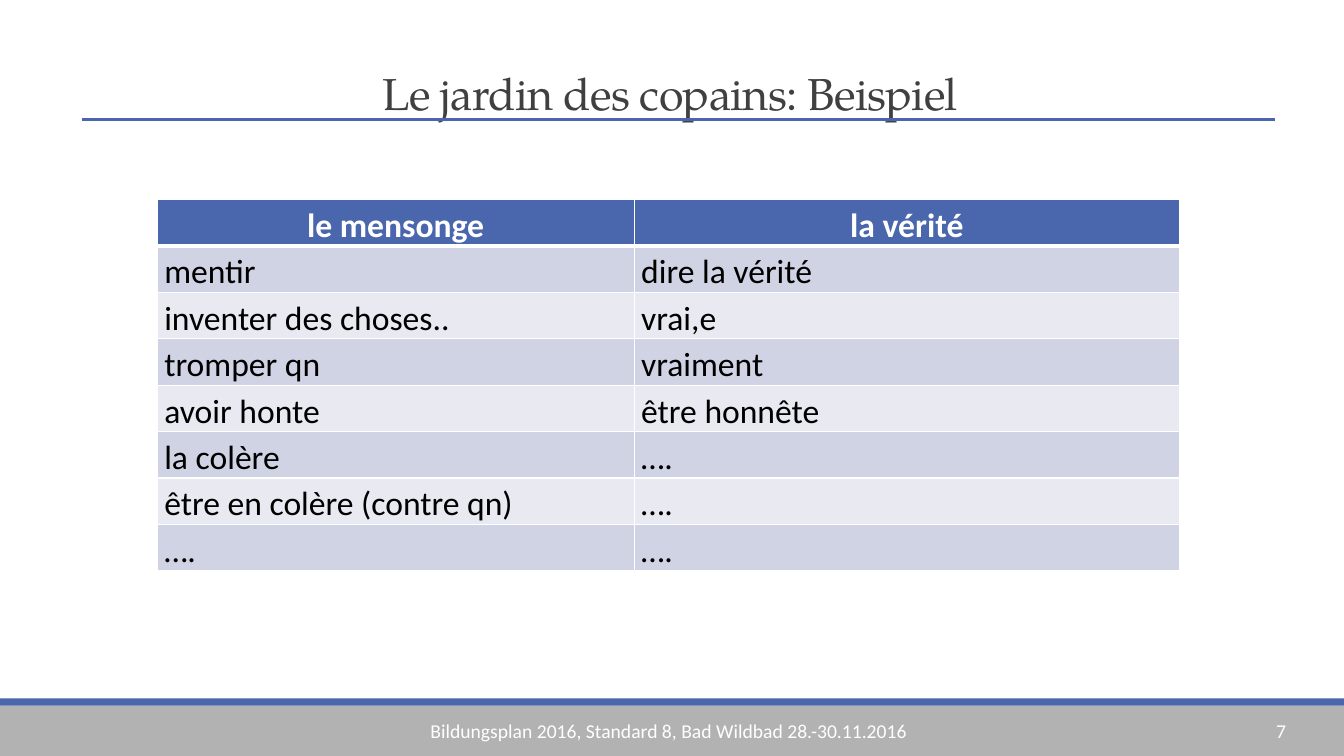
from dataclasses import dataclass

from lxml import etree
from pptx import Presentation
from pptx import util as u
from pptx.dml.color import RGBColor
from pptx.enum import shapes, text
from pptx.oxml import ns

PX = 9144  # EMU per px, 100 px to the inch


@dataclass(frozen=True)
class Theme:
    accent: str = "4A66AC"
    footer: str = "B2B2B2"
    white: str = "FFFFFF"
    black: str = "000000"
    title: str = "404040"
    bands: tuple = ("D0D3E3", "E9EAF1")
    heading_font: str = "TeX Gyre Pagella"
    body_font: str = "Calibri"
    title_size: int = 32
    table_size: int = 24
    footer_size: int = 14


THEME = Theme()
VOCABULARY = [
    ("le mensonge", "la vérité"),
    ("mentir", "dire la vérité"),
    ("inventer des choses..", "vrai,e"),
    ("tromper qn", "vraiment"),
    ("avoir honte", "être honnête"),
    ("la colère", "…."),
    ("être en colère (contre qn)", "…."),
    ("….", "…."),
]


def px(*lengths):
    return [u.Emu(length * PX) for length in lengths]


def add_run(paragraph, words, font, size, color, bold=False):
    run = paragraph.add_run()
    run.text = words
    run.font.name = font
    run.font.size = u.Pt(size)
    run.font.bold = bold
    run.font.color.rgb = RGBColor.from_string(color)
    return run


def add_text_box(slide, box, anchor=text.MSO_ANCHOR.TOP):
    frame = slide.shapes.add_textbox(*px(*box)).text_frame
    frame.word_wrap = True
    frame.vertical_anchor = anchor
    return frame.paragraphs[0]


def add_bar(slide, box, color):
    bar = slide.shapes.add_shape(shapes.MSO_SHAPE.RECTANGLE, *px(*box))
    bar.shadow.inherit = False
    bar.fill.solid()
    bar.fill.fore_color.rgb = RGBColor.from_string(color)
    bar.line.fill.background()


def add_footer(slide, box, words, number):
    left, top, width, height = box
    stripe = 7
    add_bar(slide, (left, top + stripe, width, height - stripe), THEME.footer)
    add_bar(slide, (left, top, width, stripe), THEME.accent)
    for label, offset, label_width in ((words, 417, 499), (number, 1256, 77)):
        paragraph = add_text_box(slide, (left + offset, top + 15, label_width, 34))
        add_run(paragraph, label, THEME.body_font, THEME.footer_size, THEME.white)


def add_title(slide, box, words):
    left, top, width, height = box
    # Heading
    paragraph = add_text_box(slide, (left + 289, top, 605, height), text.MSO_ANCHOR.BOTTOM)
    paragraph.line_spacing = 0.85
    run = add_run(paragraph, words, THEME.heading_font, THEME.title_size, THEME.title)
    run.font._element.set("spc", "-50")
    # Rule under the heading
    rule_y = top + height - 5
    rule = slide.shapes.add_connector(
        shapes.MSO_CONNECTOR.STRAIGHT, *px(left, rule_y, left + width, rule_y))
    rule.line.color.rgb = RGBColor.from_string(THEME.accent)
    rule.line.width = u.Pt(2.25)
    etree.SubElement(rule._element.spPr, ns.qn("a:effectLst"))


def set_borders(cell, top, bottom):
    properties = cell._tc.get_or_add_tcPr()
    sides = {"lnL": 1, "lnR": 1, "lnT": top, "lnB": bottom}
    for position, (side, points) in enumerate(sides.items()):
        line = etree.Element(ns.qn(f"a:{side}"), w=str(u.Pt(points)))
        fill = etree.SubElement(line, ns.qn("a:solidFill"))
        etree.SubElement(fill, ns.qn("a:srgbClr"), val=THEME.white)
        properties.insert(position, line)


def add_vocabulary(slide, box, rows, first_share):
    left, top, width, height = box
    table = slide.shapes.add_table(len(rows), 2, *px(*box)).table
    first_width = round(width * first_share)
    for column, length in zip(table.columns, px(first_width, width - first_width)):
        column.width = length
    for row_index, words in enumerate(rows):
        header = row_index == 0
        table.rows[row_index].height = px(height // len(rows))[0]
        for column_index, word in enumerate(words):
            cell = table.cell(row_index, column_index)
            cell.margin_left, cell.margin_right, cell.margin_top, cell.margin_bottom = px(7, 7, 0, 0)
            cell.fill.solid()
            color = THEME.accent if header else THEME.bands[(row_index - 1) % 2]
            cell.fill.fore_color.rgb = RGBColor.from_string(color)
            set_borders(cell, 3 if row_index == 1 else 1, 3 if header else 1)
            paragraph = cell.text_frame.paragraphs[0]
            paragraph.line_spacing = 1.15
            paragraph.alignment = text.PP_ALIGN.CENTER if header else text.PP_ALIGN.LEFT
            add_run(paragraph, word, THEME.body_font, THEME.table_size,
                    THEME.white if header else THEME.black, header)


def main():
    presentation = Presentation()
    presentation.slide_width, presentation.slide_height = px(1333, 750)
    slide = presentation.slides.add_slide(presentation.slide_layouts[6])
    add_footer(slide, (0, 693, 1333, 57),
               "Bildungsplan 2016, Standard 8, Bad Wildbad 28.-30.11.2016", "7")
    add_title(slide, (81, 40, 1184, 84), "Le jardin des copains: Beispiel")
    add_vocabulary(slide, (156, 198, 1014, 368), VOCABULARY, 0.4665)
    presentation.save("out.pptx")


if __name__ == "__main__":
    main()
